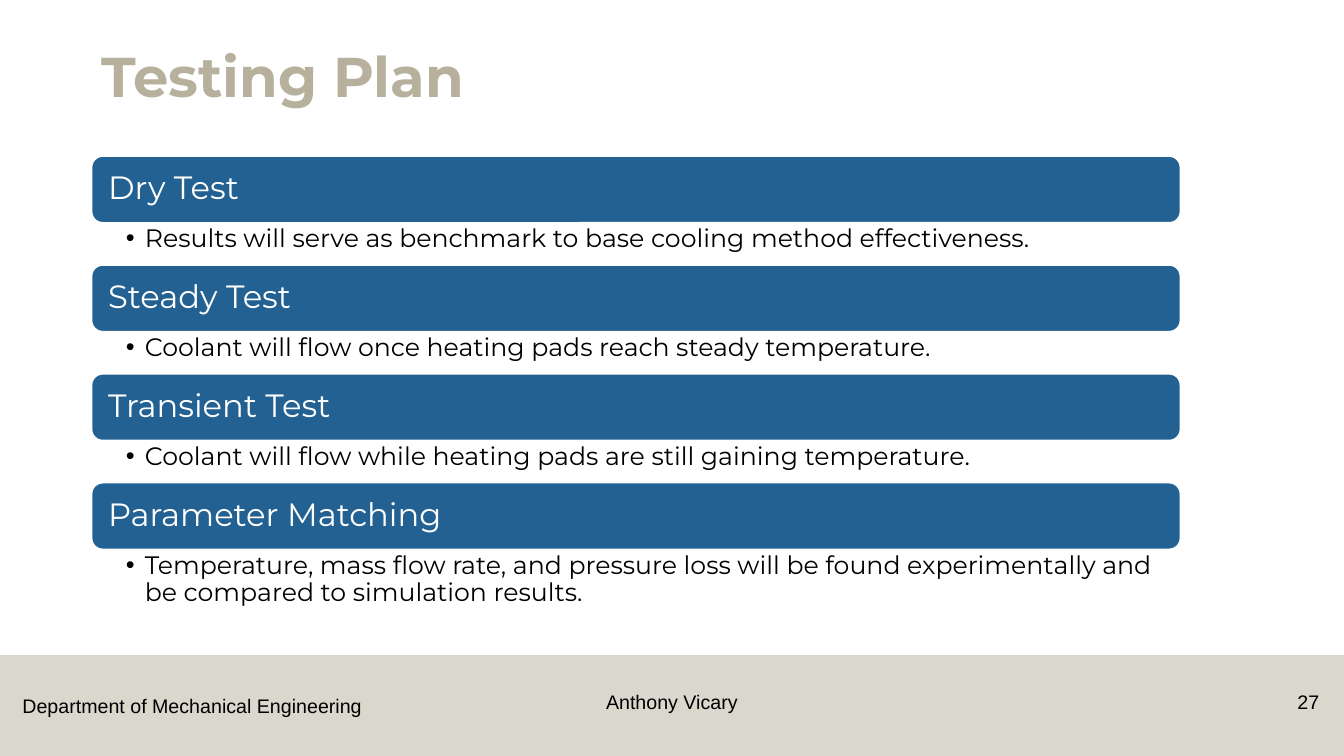
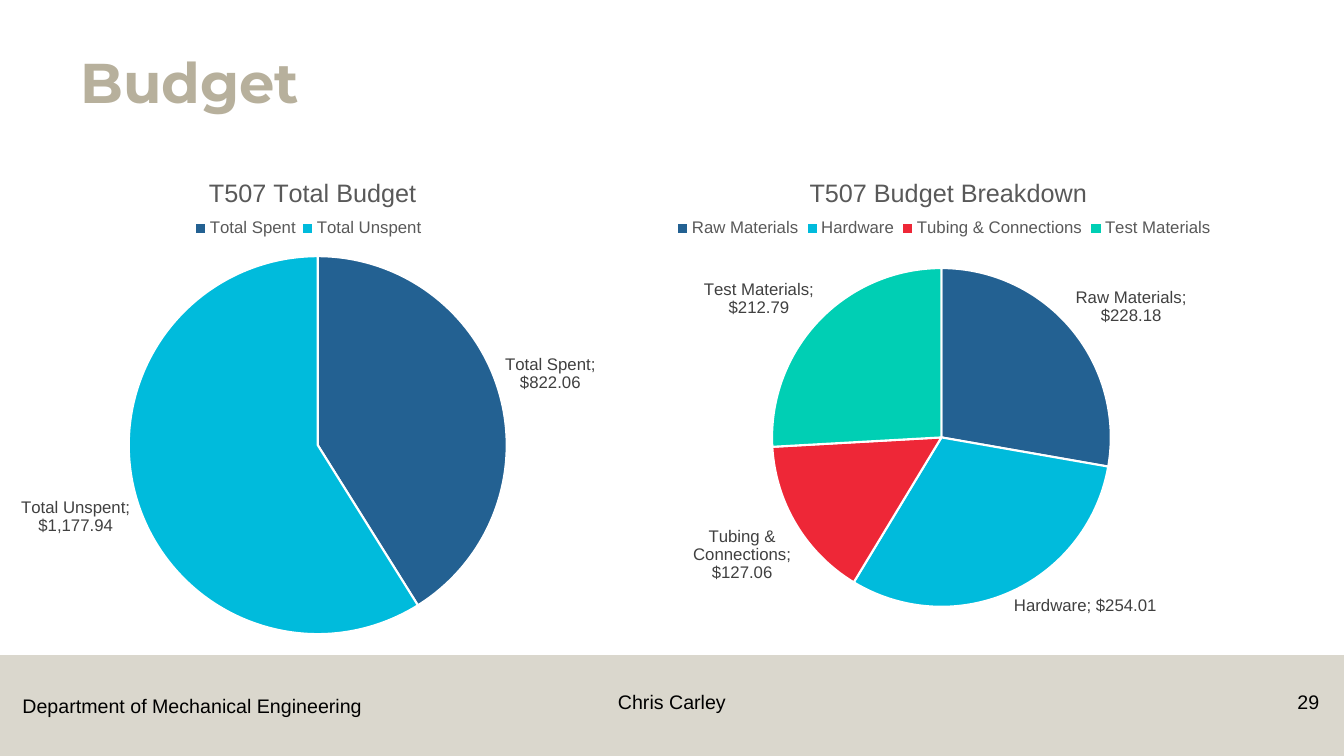
from lxml.etree import SubElement
from pptx import Presentation
from pptx.chart.data import CategoryChartData
from pptx.dml.color import RGBColor
from pptx.enum.chart import XL_CHART_TYPE, XL_LABEL_POSITION, XL_LEGEND_POSITION
from pptx.enum.shapes import MSO_SHAPE
from pptx.enum.text import MSO_ANCHOR, PP_ALIGN
from pptx.oxml import parse_xml
from pptx.oxml.ns import nsdecls, qn
from pptx.util import Pt

WHITE = RGBColor(0xFF, 0xFF, 0xFF)
BLACK = RGBColor(0x00, 0x00, 0x00)
SAND = RGBColor(0xB7, 0xB0, 0x9C)
BLUE = RGBColor(0x23, 0x61, 0x92)
CYAN = RGBColor(0x00, 0xBB, 0xDC)
RED = RGBColor(0xEE, 0x27, 0x37)
TEAL = RGBColor(0x00, 0xCF, 0xB4)
GREY = RGBColor(0x59, 0x59, 0x59)
DARK = RGBColor(0x40, 0x40, 0x40)
SLICES = [BLUE, CYAN, RED, TEAL]

WIDE, HIGH = 960, 540
HEAD, BODY = "Montserrat", "Arial"
MONEY = '"$"#,##0.00'


def style(font, size, color, name=BODY, bold=False):
    font.name, font.size, font.bold = name, Pt(size), bold
    font.color.rgb = color


def write(frame, text, size=14, color=BLACK, name=BODY, bold=False,
          align=PP_ALIGN.LEFT, anchor=MSO_ANCHOR.TOP, inset=(7.2, 3.6, 7.2, 3.6),
          spacing=1.0, wrap=True, bullet=0):
    """Fill a text frame; bullet is the hanging indent in points."""
    frame.word_wrap = wrap
    frame.vertical_anchor = anchor
    (frame.margin_left, frame.margin_top,
     frame.margin_right, frame.margin_bottom) = map(Pt, inset)
    para = frame.paragraphs[0]
    para.text = text
    para.alignment, para.line_spacing = align, spacing
    if bullet:
        props = para._p.get_or_add_pPr()
        props.set("marL", str(Pt(bullet)))
        props.set("indent", str(-Pt(bullet)))
        SubElement(props, qn("a:buFont")).set("typeface", BODY)
        SubElement(props, qn("a:buChar")).set("char", "•")
    style(para.runs[0].font, size, color, name, bold)


def place(part, frame, x, y, w=None, h=None, inner=False):
    """Pin a chart part, given in slide points, inside the chart frame."""
    left, top, wide, high = frame
    spots = [("x", (x - left) / wide), ("y", (y - top) / high)]
    if w:
        spots += [("w", w / wide), ("h", h / high)]
    layout = part.find(qn("c:layout"))
    if layout is None:
        layout = parse_xml(f"<c:layout {nsdecls('c')}/>")
        part.insert(0, layout)
    manual = SubElement(layout, qn("c:manualLayout"))
    if inner:
        SubElement(manual, qn("c:layoutTarget")).set("val", "inner")
    for axis in ("x", "y"):
        SubElement(manual, qn(f"c:{axis}Mode")).set("val", "edge")
    for tag, share in spots:
        SubElement(manual, qn(f"c:{tag}")).set("val", f"{share:.4f}")


class Deck:
    def __init__(self):
        self.show = Presentation()
        self.show.slide_width, self.show.slide_height = Pt(WIDE), Pt(HIGH)
        self.slide = None

    def page(self, title, left, top, author, number):
        self.slide = self.show.slides.add_slide(self.show.slide_layouts[6])
        band = self.shape(MSO_SHAPE.RECTANGLE, (0, 468, WIDE, 72), SAND)
        tint = band.fill._xPr.find(qn("a:solidFill"))[0]
        SubElement(tint, qn("a:alpha")).set("val", "50000")
        self.text("Department of Mechanical Engineering",
                  (8.9, 491.8, 258.5, 24.2), wrap=False)
        self.text(title, (left, top, 828, 78.5), size=40, color=SAND, name=HEAD,
                  bold=True, anchor=MSO_ANCHOR.BOTTOM, spacing=0.9)
        self.text(author, (318, 489, 324, 28.8), align=PP_ALIGN.CENTER)
        self.text(number, (894, 489, 55.5, 28.8), align=PP_ALIGN.RIGHT)

    def shape(self, kind, box, fill, line=None):
        shape = self.slide.shapes.add_shape(kind, *map(Pt, box))
        shape.shadow.inherit = False
        shape.fill.solid()
        shape.fill.fore_color.rgb = fill
        if line is None:
            shape.line.fill.background()
        else:
            shape.line.color.rgb, shape.line.width = line, Pt(1)
        return shape

    def text(self, text, box, **form):
        write(self.slide.shapes.add_textbox(*map(Pt, box)).text_frame, text, **form)

    def card(self, head, note, top, deep):
        left, wide, high = 65.5, 777.6, 47.5
        bar = self.shape(MSO_SHAPE.ROUNDED_RECTANGLE, (left, top, wide, high), BLUE, WHITE)
        write(bar.text_frame, head, size=23, color=WHITE, name=HEAD, spacing=0.9,
              anchor=MSO_ANCHOR.MIDDLE, inset=(9.4, 7.2, 9.4, 7.2))
        self.text(note, (left, top + high, wide, deep), size=18, name=HEAD,
                  spacing=0.9, inset=(24.5, 2.2, 13, 2.2), bullet=13.5)

    def pie(self, title, frame, sums, head, key, disc):
        """Draw a pie; head, key and disc place its title, legend and plot."""
        data = CategoryChartData(number_format=MONEY)
        data.categories = list(sums)
        data.add_series("Series 1", list(sums.values()))
        chart = self.slide.shapes.add_chart(
            XL_CHART_TYPE.PIE, *map(Pt, frame), data).chart
        style(chart.font, 10, BLACK)

        chart.has_title = True
        name = chart.chart_title
        name.include_in_layout = False
        name.text_frame.text = title
        style(name.text_frame.paragraphs[0].runs[0].font, 18, GREY)

        chart.has_legend = True
        chart.legend.position = XL_LEGEND_POSITION.TOP
        chart.legend.include_in_layout = False
        style(chart.legend.font, 12, GREY)

        plot = chart.plots[0]
        plot.vary_by_categories = True
        for spot, color in enumerate(SLICES[:len(sums)]):
            form = plot.series[0].points[spot].format
            form.fill.solid()
            form.fill.fore_color.rgb = color
            form.line.color.rgb, form.line.width = WHITE, Pt(1.5)

        plot.has_data_labels = True
        tags = plot.data_labels
        tags.show_value = tags.show_category_name = True
        tags.show_percentage = False
        tags.number_format, tags.number_format_is_linked = MONEY, False
        tags.position = XL_LABEL_POSITION.OUTSIDE_END
        style(tags.font, 12, DARK)

        place(name._element, frame, *head)
        place(chart.legend._element, frame, *key)
        area = chart._chartSpace.chart.plotArea
        place(area, frame, *disc, inner=True)


def main():
    deck = Deck()
    deck.page("Testing Plan", 65.5, 3.6, "Anthony Vicary", "27")
    tests = [
        ("Dry Test",
         "Results will serve as benchmark to base cooling method effectiveness.", 30.2),
        ("Steady Test",
         "Coolant will flow once heating pads reach steady temperature.", 30.2),
        ("Transient Test",
         "Coolant will flow while heating pads are still gaining temperature.", 30.2),
        ("Parameter Matching",
         "Temperature, mass flow rate, and pressure loss will be found "
         "experimentally and be compared to simulation results.", 50.4),
    ]
    for row, (head, note, deep) in enumerate(tests):
        deck.card(head, note, 111.6 + row * 77.75, deep)

    deck.page("Budget", 50.4, 7.9, "Chris Carley", "29")
    deck.pie("T507 Total Budget", (-38.9, 106.6, 519, 356.4),
             {"Total Spent": 822.06, "Total Unspent": 1177.94},
             head=(146, 123), key=(135, 154, 171, 18), disc=(92, 183, 270, 270))
    deck.pie("T507 Budget Breakdown", (388.8, 106.6, 571, 361.4),
             {"Raw Materials": 228.18, "Hardware": 254.01,
              "Tubing & Connections": 127.06, "Test Materials": 212.79},
             head=(575, 123), key=(478, 154, 393, 18), disc=(551.5, 191.5, 242, 242))
    deck.show.save("out.pptx")


if __name__ == "__main__":
    main()
